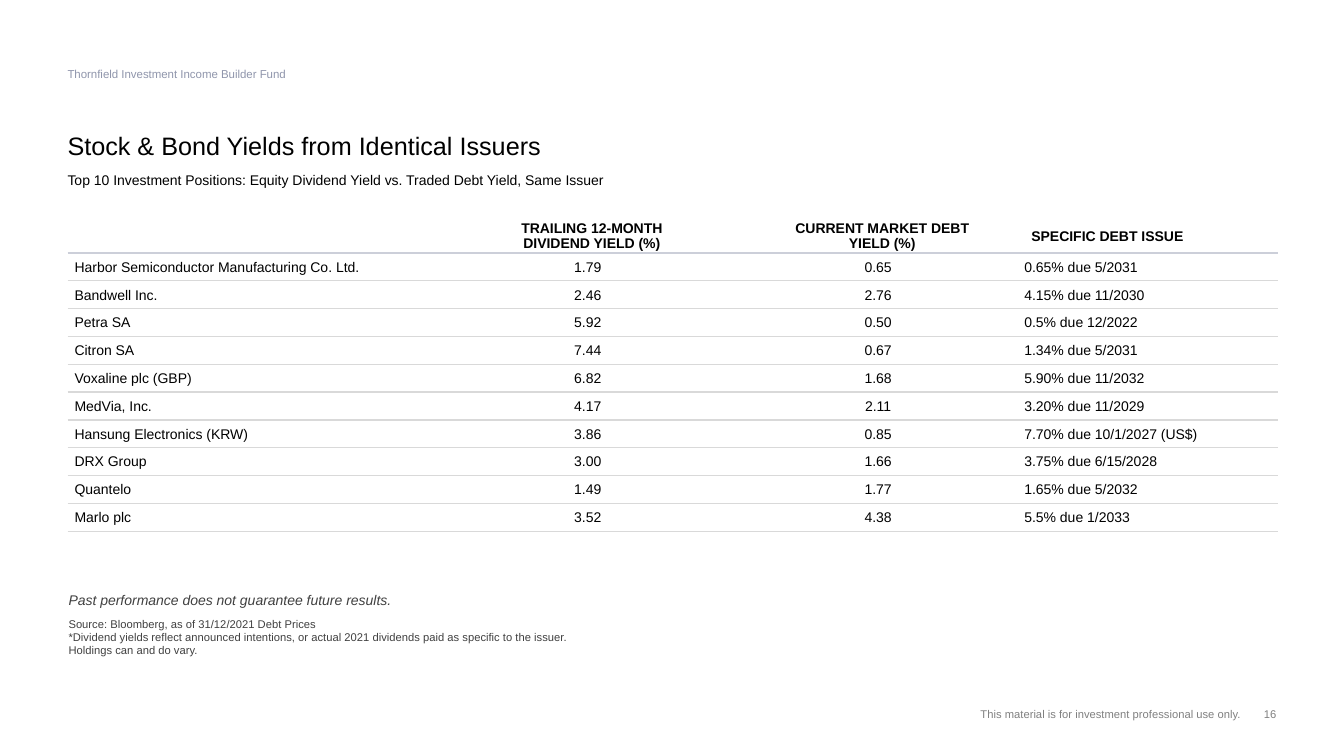
from dataclasses import dataclass

from lxml.etree import SubElement
from pptx import Presentation
from pptx.dml.color import RGBColor
from pptx.enum.text import MSO_ANCHOR as Anchor, PP_ALIGN as Align
from pptx.oxml.ns import qn
from pptx.util import Inches, Pt

FONT = "Arial"
COLORS = {
    "text": "000000",
    "fund": "9096AC",
    "note": "404040",
    "footer": "808080",
    "header_rule": "CCCFD9",
    "row_rule": "D9D9D9",
}


@dataclass
class TextBlock:
    left: float
    top: float
    width: float
    height: float
    lines: list[str]
    size: float
    color: str
    anchor: Anchor = Anchor.TOP
    align: Align = Align.LEFT
    italic: bool = False
    spacing: float = 1.0


@dataclass
class Holding:
    issuer: str
    dividend_yield: str
    debt_yield: str
    debt_issue: str

    def values(self) -> list[str]:
        return [self.issuer, self.dividend_yield, self.debt_yield, self.debt_issue]


TEXT_BLOCKS = [
    TextBlock(0.67, 1.33, 9.34, 0.27, ["Stock & Bond Yields from Identical Issuers"],
              18, "text", anchor=Anchor.BOTTOM, spacing=0.9),
    TextBlock(0.67, 0.67, 4, 0.14, ["Thornfield Investment Income Builder Fund"], 8.2, "fund"),
    TextBlock(0.67, 1.7, 9.34, 0.18,
              ["Top 10 Investment Positions: Equity Dividend Yield vs. Traded Debt Yield, Same Issuer"],
              10, "text"),
    TextBlock(0.68, 5.91, 11.56, 0.13, ["Past performance does not guarantee future results."],
              10, "note", anchor=Anchor.BOTTOM, italic=True),
    TextBlock(0.68, 6.12, 11.56, 0.4,
              ["Source: Bloomberg, as of 31/12/2021 Debt Prices",
               "*Dividend yields reflect announced intentions, or actual 2021 dividends paid as specific to the issuer.",
               "Holdings can and do vary."], 8, "note"),
    TextBlock(6.67, 6.95, 5.64, 0.2, ["This material is for investment professional use only."],
              8, "footer", anchor=Anchor.BOTTOM, align=Align.RIGHT),
    TextBlock(12.3, 6.95, 0.36, 0.2, ["16"], 8, "footer", anchor=Anchor.BOTTOM, align=Align.RIGHT),
]

HEADERS = [
    "",
    "TRAILING 12-MONTH\nDIVIDEND YIELD (%)",
    "CURRENT MARKET DEBT\nYIELD (%)",
    "SPECIFIC DEBT ISSUE",
]
HOLDINGS = [
    Holding("Harbor Semiconductor Manufacturing Co. Ltd.", "1.79", "0.65", "0.65% due 5/2031"),
    Holding("Bandwell Inc.", "2.46", "2.76", "4.15% due 11/2030"),
    Holding("Petra SA", "5.92", "0.50", "0.5% due 12/2022"),
    Holding("Citron SA", "7.44", "0.67", "1.34% due 5/2031"),
    Holding("Voxaline plc (GBP)", "6.82", "1.68", "5.90% due 11/2032"),
    Holding("MedVia, Inc.", "4.17", "2.11", "3.20% due 11/2029"),
    Holding("Hansung Electronics (KRW)", "3.86", "0.85", "7.70% due 10/1/2027 (US$)"),
    Holding("DRX Group", "3.00", "1.66", "3.75% due 6/15/2028"),
    Holding("Quantelo", "1.49", "1.77", "1.65% due 5/2032"),
    Holding("Marlo plc", "3.52", "4.38", "5.5% due 1/2033"),
]
COLUMN_WIDTHS = [3.72, 2.88, 2.88, 2.53]
COLUMN_ALIGNS = [Align.LEFT, Align.CENTER, Align.CENTER, Align.LEFT]
HEADER_HEIGHT = 0.33
BODY_HEIGHT = 2.76


def write(para, text: str, *, size: float, color: str, align: Align = Align.LEFT,
          bold: bool = False, italic: bool = False, spacing: float = 1.0) -> None:
    """Fill a paragraph, turning each newline into a line break."""
    para.alignment = align
    para.line_spacing = spacing
    for index, line in enumerate(text.split("\n")):
        if index:
            para.add_line_break()
        span = para.add_run()
        span.text = line
        span.font.name = FONT
        span.font.size = Pt(size)
        span.font.bold = bold
        span.font.italic = italic
        span.font.color.rgb = RGBColor.from_string(COLORS[color])


def add_text(page, block: TextBlock) -> None:
    box = page.shapes.add_textbox(Inches(block.left), Inches(block.top),
                                  Inches(block.width), Inches(block.height))
    frame = box.text_frame
    frame.word_wrap = True
    frame.vertical_anchor = block.anchor
    frame.margin_left = frame.margin_top = frame.margin_right = frame.margin_bottom = 0
    for index, line in enumerate(block.lines):
        para = frame.add_paragraph() if index else frame.paragraphs[0]
        write(para, line, size=block.size, color=block.color, align=block.align,
              italic=block.italic, spacing=block.spacing)


def set_borders(cell, top: str | None, bottom: str) -> None:
    """Rule the cell above and below, leaving its sides open."""
    properties = cell._tc.get_or_add_tcPr()
    for tag, color in (("a:lnL", None), ("a:lnR", None), ("a:lnT", top), ("a:lnB", bottom)):
        line = SubElement(properties, qn(tag), w=str(Pt(1)))
        if color is None:
            SubElement(line, qn("a:noFill"))
        else:
            SubElement(SubElement(line, qn("a:solidFill")), qn("a:srgbClr"), val=COLORS[color])


def add_yield_table(page) -> None:
    rows = [HEADERS] + [holding.values() for holding in HOLDINGS]
    table = page.shapes.add_table(len(rows), len(HEADERS), Inches(0.67), Inches(2.18),
                                  Inches(sum(COLUMN_WIDTHS)),
                                  Inches(HEADER_HEIGHT + BODY_HEIGHT)).table
    table.first_row = table.horz_banding = False
    for column, width in zip(table.columns, COLUMN_WIDTHS):
        column.width = Inches(width)

    for row_index, values in enumerate(rows):
        is_header = row_index == 0
        table.rows[row_index].height = Inches(
            HEADER_HEIGHT if is_header else BODY_HEIGHT / len(HOLDINGS))
        top = None if is_header else "header_rule" if row_index == 1 else "row_rule"
        bottom = "header_rule" if is_header else "row_rule"
        for column_index, text in enumerate(values):
            cell = table.cell(row_index, column_index)
            set_borders(cell, top, bottom)
            cell.fill.background()
            cell.vertical_anchor = Anchor.MIDDLE
            body_left = 0.01 if column_index else 0.07
            cell.margin_left = Inches(0.08 if is_header else body_left)
            cell.margin_top = cell.margin_right = Inches(0 if is_header else 0.01)
            cell.margin_bottom = 0
            write(cell.text_frame.paragraphs[0], text, size=10, color="text",
                  align=COLUMN_ALIGNS[column_index], bold=is_header)


def main() -> None:
    deck = Presentation()
    deck.slide_width, deck.slide_height = Inches(13.33), Inches(7.5)
    page = deck.slides.add_slide(deck.slide_layouts[6])
    add_yield_table(page)
    for block in TEXT_BLOCKS:
        add_text(page, block)
    deck.save("out.pptx")


if __name__ == "__main__":
    main()
